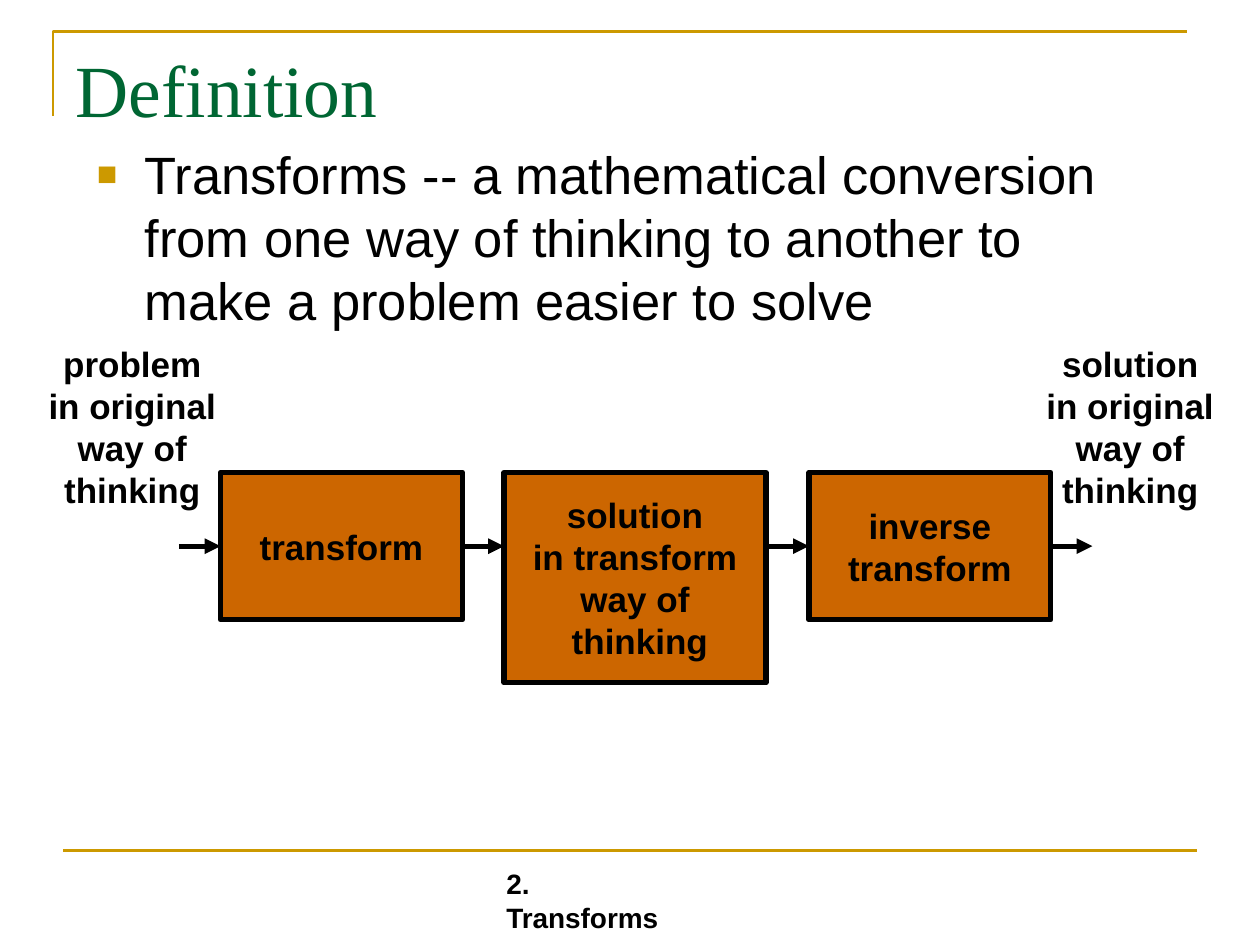
"""Build the slide that defines a transform with a flow of three boxes."""
from dataclasses import dataclass
from typing import Optional

from lxml import etree
from pptx import Presentation
from pptx import util as u
from pptx.dml.color import RGBColor
from pptx.enum import shapes, text
from pptx.oxml.ns import qn

COLORS = {"gold": "CC9900", "green": "006633", "orange": "CC6600", "black": "000000"}
BOX_TOP = 3.75
BOX_HEIGHT = 1.17
FLOW_Y = BOX_TOP + BOX_HEIGHT / 2
ARROW_LENGTH = 0.33
LEFT_SIDE, RIGHT_SIDE = 1, 3


@dataclass
class Box:
    left: float
    width: float
    height: float
    lines: list[str]


@dataclass
class Label:
    left: float
    top: float
    width: float
    height: float
    words: str
    size: int
    align: text.PP_ALIGN
    bold: bool = True


@dataclass
class Arrow:
    start: float
    source: Optional[int] = None
    target: Optional[int] = None


BOXES = [
    Box(1.75, 1.92, BOX_HEIGHT, ["transform"]),
    Box(4, 2.08, 1.67, ["solution", "in transform", "way of", " thinking"]),
    Box(6.42, 1.92, BOX_HEIGHT, ["inverse", "transform"]),
]
ARROWS = [
    Arrow(3.67, source=0),
    Arrow(6.09, target=2),
    Arrow(1.42, target=0),
    Arrow(8.34, source=2),
]
DEFINITION = Label(
    0.67, 1.08, 8.5, 1.42,
    "Transforms -- a mathematical conversion from one way of thinking "
    "to another to make a problem easier to solve",
    30, text.PP_ALIGN.LEFT, False,
)
LABELS = [
    Label(8.18, 2.67, 1.58, 1.43, "solution in original way of thinking", 20, text.PP_ALIGN.CENTER),
    Label(0.26, 2.67, 1.58, 1.43, "problem in original way of thinking", 20, text.PP_ALIGN.CENTER),
    Label(3.92, 6.83, 1.57, 0.36, "2. Transforms", 16, text.PP_ALIGN.LEFT),
]


def color(name: str) -> RGBColor:
    return RGBColor.from_string(COLORS[name])


def add_run(paragraph, words: str, size: int, bold: bool = False,
            font: str = "Arial", color_name: str = "black") -> None:
    run = paragraph.add_run()
    run.text = words
    run.font.name = font
    run.font.size = u.Pt(size)
    run.font.bold = bold
    run.font.color.rgb = color(color_name)


def style_line(shape, color_name: str, width: float) -> None:
    shape.line.color.rgb = color(color_name)
    shape.line.width = u.Pt(width)


def add_line(slide, start: tuple[float, float], end: tuple[float, float],
             color_name: str, width: float):
    connector = slide.shapes.add_connector(
        shapes.MSO_CONNECTOR.STRAIGHT, *map(u.Inches, start + end))
    style_line(connector, color_name, width)
    etree.SubElement(connector._element.spPr, qn("a:effectLst"))
    return connector


def add_frame(slide) -> None:
    builder = slide.shapes.build_freeform(u.Inches(0.42), u.Inches(0.92))
    builder.add_line_segments(
        [(u.Inches(0.42), u.Inches(0.25)), (u.Inches(9.42), u.Inches(0.25))], close=False)
    corner = builder.convert_to_shape()
    corner.shadow.inherit = False
    corner.fill.background()
    style_line(corner, "gold", 1.5)
    add_line(slide, (0.5, 6.75), (9.5, 6.75), "gold", 1.5)


def format_title(slide) -> None:
    title = slide.shapes.title
    title.left, title.top, title.width, title.height = map(u.Inches, (0.5, 0.3, 9, 1.25))
    title.text_frame.vertical_anchor = text.MSO_ANCHOR.TOP
    paragraph = title.text_frame.paragraphs[0]
    paragraph.alignment = text.PP_ALIGN.LEFT
    add_run(paragraph, "Definition", 42, font="Times New Roman", color_name="green")


def add_label(slide, label: Label):
    shape = slide.shapes.add_textbox(
        *map(u.Inches, (label.left, label.top, label.width, label.height)))
    shape.text_frame.word_wrap = True
    paragraph = shape.text_frame.paragraphs[0]
    paragraph.alignment = label.align
    add_run(paragraph, label.words, label.size, label.bold)
    return paragraph


def add_bullet(paragraph) -> None:
    properties = paragraph._p.get_or_add_pPr()
    properties.set("marL", str(u.Inches(0.38)))
    properties.set("indent", str(u.Inches(-0.38)))
    bullet_color = etree.SubElement(properties, qn("a:buClr"))
    etree.SubElement(bullet_color, qn("a:srgbClr"), val=COLORS["gold"])
    etree.SubElement(properties, qn("a:buSzPct"), val="65000")
    etree.SubElement(properties, qn("a:buFont"), typeface="Arial")
    etree.SubElement(properties, qn("a:buChar"), char="■")


def add_box(slide, box: Box):
    shape = slide.shapes.add_shape(
        shapes.MSO_SHAPE.RECTANGLE,
        *map(u.Inches, (box.left, BOX_TOP, box.width, box.height)))
    shape.shadow.inherit = False
    shape.fill.solid()
    shape.fill.fore_color.rgb = color("orange")
    style_line(shape, "black", 3)
    frame = shape.text_frame
    frame.word_wrap = False
    frame.vertical_anchor = text.MSO_ANCHOR.MIDDLE
    for index, line in enumerate(box.lines):
        paragraph = frame.add_paragraph() if index else frame.paragraphs[0]
        paragraph.alignment = text.PP_ALIGN.CENTER
        add_run(paragraph, line, 20, True)
    return shape


def add_arrow(slide, arrow: Arrow, boxes: list) -> None:
    connector = add_line(
        slide, (arrow.start, FLOW_Y), (arrow.start + ARROW_LENGTH, FLOW_Y), "black", 3)
    etree.SubElement(connector.line._get_or_add_ln(), qn("a:tailEnd"), type="triangle")
    if arrow.source is not None:
        connector.begin_connect(boxes[arrow.source], RIGHT_SIDE)
    if arrow.target is not None:
        connector.end_connect(boxes[arrow.target], LEFT_SIDE)


def main() -> None:
    presentation = Presentation()
    presentation.slide_width = u.Inches(10)
    presentation.slide_height = u.Inches(7.5)
    slide = presentation.slides.add_slide(presentation.slide_layouts.get_by_name("Title Only"))
    add_frame(slide)
    format_title(slide)
    add_bullet(add_label(slide, DEFINITION))
    boxes = [add_box(slide, box) for box in BOXES]
    for arrow in ARROWS:
        add_arrow(slide, arrow, boxes)
    for label in LABELS:
        add_label(slide, label)
    presentation.save("out.pptx")


if __name__ == "__main__":
    main()
